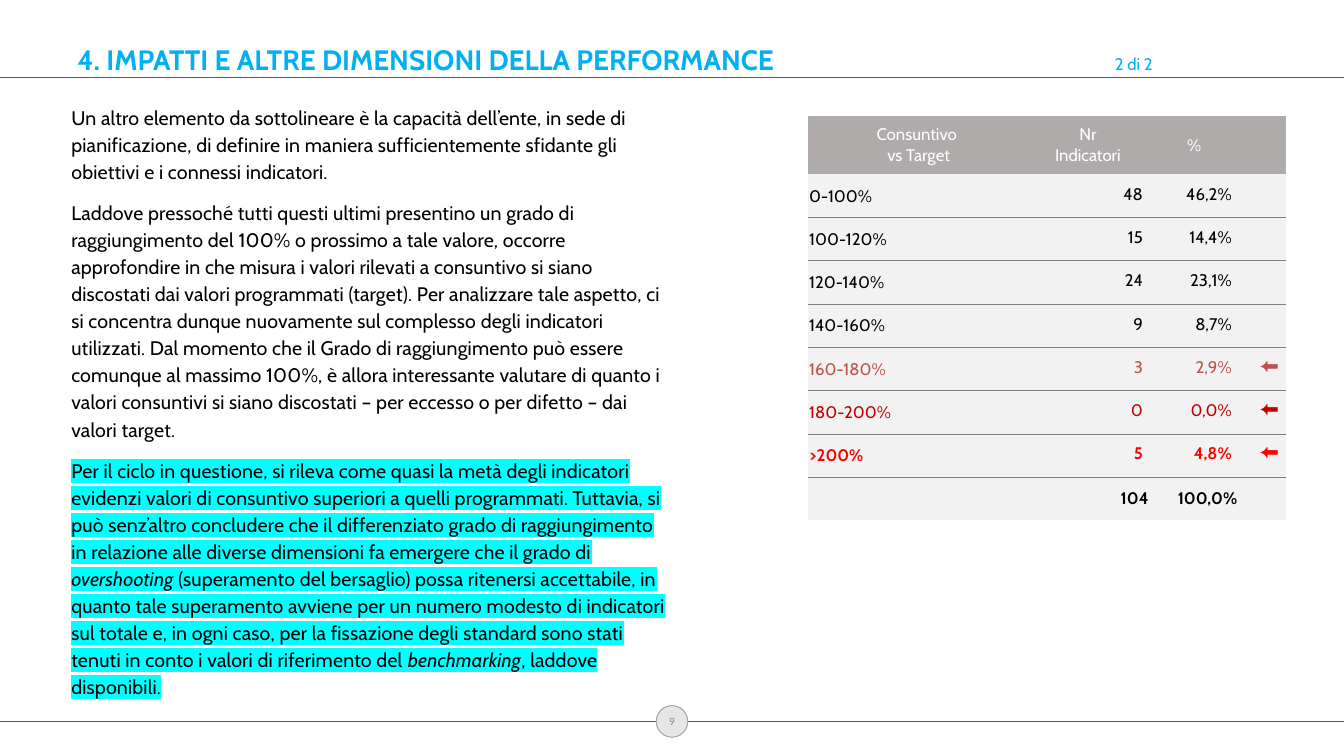
from lxml.etree import SubElement
from pptx import Presentation
from pptx.dml.color import RGBColor
from pptx.enum.shapes import MSO_CONNECTOR, MSO_SHAPE
from pptx.enum.text import MSO_ANCHOR, MSO_AUTO_SIZE, PP_ALIGN
from pptx.oxml.ns import qn
from pptx.util import Pt

WIDTH, HEIGHT = 960, 540
BLACK = RGBColor(0x00, 0x00, 0x00)
WHITE = RGBColor(0xFF, 0xFF, 0xFF)
SKY = RGBColor(0x00, 0xB0, 0xF0)
RULE_BLUE = RGBColor(0x00, 0x70, 0xC0)
CYAN = RGBColor(0x00, 0xFF, 0xFF)
BADGE_FILL = RGBColor(0xE7, 0xE6, 0xE6)
BADGE_LINE = RGBColor(0xA6, 0xA6, 0xA6)
BADGE_TEXT = RGBColor(0x8C, 0x8C, 0x8C)
HEADER_FILL = RGBColor(0xAF, 0xAB, 0xAB)
ROW_FILL = RGBColor(0xF2, 0xF2, 0xF2)
BORDER = RGBColor(0x80, 0x80, 0x80)
BRICK = RGBColor(0xC0, 0x50, 0x4D)
DARK_RED = RGBColor(0xC0, 0x00, 0x00)
RED = RGBColor(0xFF, 0x00, 0x00)

PLAIN_TABLE_STYLE = "{2D5ABB26-0587-4C30-8999-92F81FD0307C}"
ARROW = "⬅"
COLUMN_WIDTHS = (155.8, 88.6, 63.4, 33.8)
HEADER_HEIGHT, ROW_HEIGHT = 41.8, 30.9

LABEL_MARGINS = dict(margin_left=Pt(1), margin_right=Pt(1),
                     margin_top=Pt(3), margin_bottom=Pt(3))
VALUE_MARGINS = dict(margin_left=Pt(5), margin_right=Pt(5),
                     margin_top=Pt(0), margin_bottom=Pt(0))
VALUE_SPACING = dict(line_spacing=Pt(12), space_before=Pt(6), space_after=Pt(6))

HEADINGS = ("Consuntivo\n vs Target", "Nr\nIndicatori", "%", "")
RESULTS = (
    (("0-100%", "48", "46,2%", ""), BLACK, False),
    (("100-120%", "15", "14,4%", ""), BLACK, False),
    (("120-140%", "24", "23,1%", ""), BLACK, False),
    (("140-160%", "9", "8,7%", ""), BLACK, False),
    (("160-180%", "3", "2,9%", ARROW), BRICK, False),
    (("180-200%", "0", "0,0%", ARROW), DARK_RED, False),
    ((">200%", "5", "4,8%", ARROW), RED, True),
)
TOTALS = ("", " 104", "100,0%", "")

# Each paragraph: highlight colour, then (text, italic) pieces.
BODY = (
    (None, (("Un altro elemento da sottolineare è la capacità dell’ente, in sede di "
             "pianificazione, di definire in maniera sufficientemente sfidante gli "
             "obiettivi e i connessi indicatori.", False),)),
    (None, (("Laddove pressoché tutti questi ultimi presentino un grado di "
             "raggiungimento del 100% o prossimo a tale valore, occorre approfondire "
             "in che misura i valori rilevati a consuntivo si siano discostati dai "
             "valori programmati (target). Per analizzare tale aspetto, ci si "
             "concentra dunque nuovamente sul complesso degli indicatori utilizzati. "
             "Dal momento che il Grado di raggiungimento può essere comunque al "
             "massimo 100%, è allora interessante valutare di quanto i valori "
             "consuntivi si siano discostati – per eccesso o per difetto – dai "
             "valori target.", False),)),
    (CYAN, (("Per il ciclo in questione, si rileva come quasi la metà degli "
             "indicatori evidenzi valori di consuntivo superiori a quelli "
             "programmati. Tuttavia, si può senz’altro concludere che il "
             "differenziato grado di raggiungimento in relazione alle diverse "
             "dimensioni fa emergere che il grado di ", False),
            ("overshooting ", True),
            ("(superamento del bersaglio) possa ritenersi accettabile, in quanto "
             "tale superamento avviene per un numero modesto di indicatori sul "
             "totale e, in ogni caso, per la fissazione degli standard sono stati "
             "tenuti in conto i valori di riferimento del ", False),
            ("benchmarking", True),
            (", laddove disponibili.", False))),
)


def apply(target, formats):
    for name, value in formats.items():
        setattr(target, name, value)


def add_run(paragraph, text, color, size, font="Cabin", **formats):
    run = paragraph.add_run()
    run.text = text
    run.font.color.rgb = color
    apply(run.font, dict(name=font, size=Pt(size), **formats))
    return run


def highlight(run, color):
    properties = run.font.fill and run._r.get_or_add_rPr()
    mark = SubElement(properties, qn("a:highlight"))
    SubElement(mark, qn("a:srgbClr"), val=str(color))
    properties.find(qn("a:solidFill")).addnext(mark)


def add_rule(slide, y):
    rule = slide.shapes.add_connector(MSO_CONNECTOR.STRAIGHT,
                                      Pt(0), Pt(y), Pt(WIDTH), Pt(y))
    rule.line.color.rgb = RULE_BLUE
    rule.line.width = Pt(0.25)
    SubElement(rule.element.spPr, qn("a:effectLst"))


def add_body(slide):
    """Running text in a two-column frame."""
    frame = slide.shapes.add_textbox(Pt(31.7), Pt(69.8), Pt(902.9), Pt(434.2)).text_frame
    frame.word_wrap = True
    columns = frame._txBody.bodyPr
    columns.set("numCol", "2")
    columns.set("spcCol", str(Pt(14.4)))
    for index, (marker, pieces) in enumerate(BODY):
        paragraph = frame.add_paragraph() if index else frame.paragraphs[0]
        apply(paragraph, dict(line_spacing=1.15, space_after=Pt(10)))
        indents = paragraph._p.get_or_add_pPr()
        indents.set("marL", str(Pt(12.2)))
        indents.set("indent", "0")
        for text, italic in pieces:
            run = add_run(paragraph, text, BLACK, 14, italic=italic)
            run._r.get_or_add_rPr().set("spc", "10")
            if marker:
                highlight(run, marker)


def add_page_number(slide):
    badge = slide.shapes.add_shape(MSO_SHAPE.OVAL, Pt(468.7), Pt(504), Pt(22.6), Pt(22.6))
    badge.shadow.inherit = False
    badge.fill.solid()
    badge.fill.fore_color.rgb = BADGE_FILL
    badge.line.color.rgb = BADGE_LINE
    badge.line.width = Pt(0.75)
    apply(badge.text_frame, dict(margin_left=Pt(1.4), margin_right=Pt(1.4),
                                 vertical_anchor=MSO_ANCHOR.MIDDLE))
    number = badge.text_frame.paragraphs[0]
    number.alignment = PP_ALIGN.CENTER
    add_run(number, "9", BADGE_TEXT, 8, "Calibri")


def add_bottom_border(cell):
    border = SubElement(cell._tc.get_or_add_tcPr(), qn("a:lnB"), w=str(Pt(0.75)))
    SubElement(SubElement(border, qn("a:solidFill")), qn("a:srgbClr"), val=str(BORDER))


def fill_cell(cell, text, fill, color, align, margins, spacing, bold=False):
    cell.fill.solid()
    cell.fill.fore_color.rgb = fill
    if not text:
        return
    apply(cell, dict(margins, vertical_anchor=MSO_ANCHOR.MIDDLE))
    size, font = (14, "Calibri") if text == ARROW else (12, "Cabin")
    for index, line in enumerate(text.split("\n")):
        frame = cell.text_frame
        paragraph = frame.add_paragraph() if index else frame.paragraphs[0]
        apply(paragraph, dict(spacing, alignment=align))
        add_run(paragraph, line, color, size, font, bold=bold)


def add_results_table(slide):
    row_count = len(RESULTS) + 2
    frame = slide.shapes.add_table(
        row_count, len(COLUMN_WIDTHS), Pt(577), Pt(82.8), Pt(sum(COLUMN_WIDTHS)),
        Pt(HEADER_HEIGHT + ROW_HEIGHT * (row_count - 1)))
    frame.element.find(".//" + qn("a:tableStyleId")).text = PLAIN_TABLE_STYLE
    table = frame.table
    apply(table, dict(first_row=False, horz_banding=False))
    for column, width in zip(table.columns, COLUMN_WIDTHS):
        column.width = Pt(width)
    for index, row in enumerate(table.rows):
        row.height = Pt(ROW_HEIGHT if index else HEADER_HEIGHT)

    for cell, heading in zip(table.rows[0].cells, HEADINGS):
        fill_cell(cell, heading, HEADER_FILL, WHITE, PP_ALIGN.CENTER, LABEL_MARGINS, {})
    for index, (texts, color, bold) in enumerate(RESULTS, 1):
        for column, text in enumerate(texts):
            cell = table.cell(index, column)
            add_bottom_border(cell)
            layout = ((PP_ALIGN.RIGHT, VALUE_MARGINS, VALUE_SPACING) if column
                      else (PP_ALIGN.LEFT, LABEL_MARGINS, {}))
            fill_cell(cell, text, ROW_FILL, color, *layout, bold)
    for cell, total in zip(table.rows[row_count - 1].cells, TOTALS):
        fill_cell(cell, total, ROW_FILL, BLACK, PP_ALIGN.RIGHT, LABEL_MARGINS, {}, True)


def add_title(slide):
    frame = slide.shapes.add_textbox(Pt(48.2), Pt(26.6), Pt(877.7), Pt(31.7)).text_frame
    apply(frame, dict(word_wrap=True, auto_size=MSO_AUTO_SIZE.SHAPE_TO_FIT_TEXT))
    title = frame.paragraphs[0]
    stops = SubElement(title._p.get_or_add_pPr(), qn("a:tabLst"))
    SubElement(stops, qn("a:tab"), pos=str(Pt(741)), algn="l")
    add_run(title, "4. IMPATTI E ALTRE DIMENSIONI DELLA PERFORMANCE\t", SKY, 20, bold=True)
    add_run(title, "2 di 2", SKY, 12, bold=False)


def main():
    deck = Presentation()
    deck.slide_width, deck.slide_height = Pt(WIDTH), Pt(HEIGHT)
    slide = deck.slides.add_slide(deck.slide_layouts[6])
    for y in (515.5, 55.4):
        add_rule(slide, y)
    add_body(slide)
    add_page_number(slide)
    add_results_table(slide)
    add_title(slide)
    deck.save("out.pptx")


if __name__ == "__main__":
    main()
